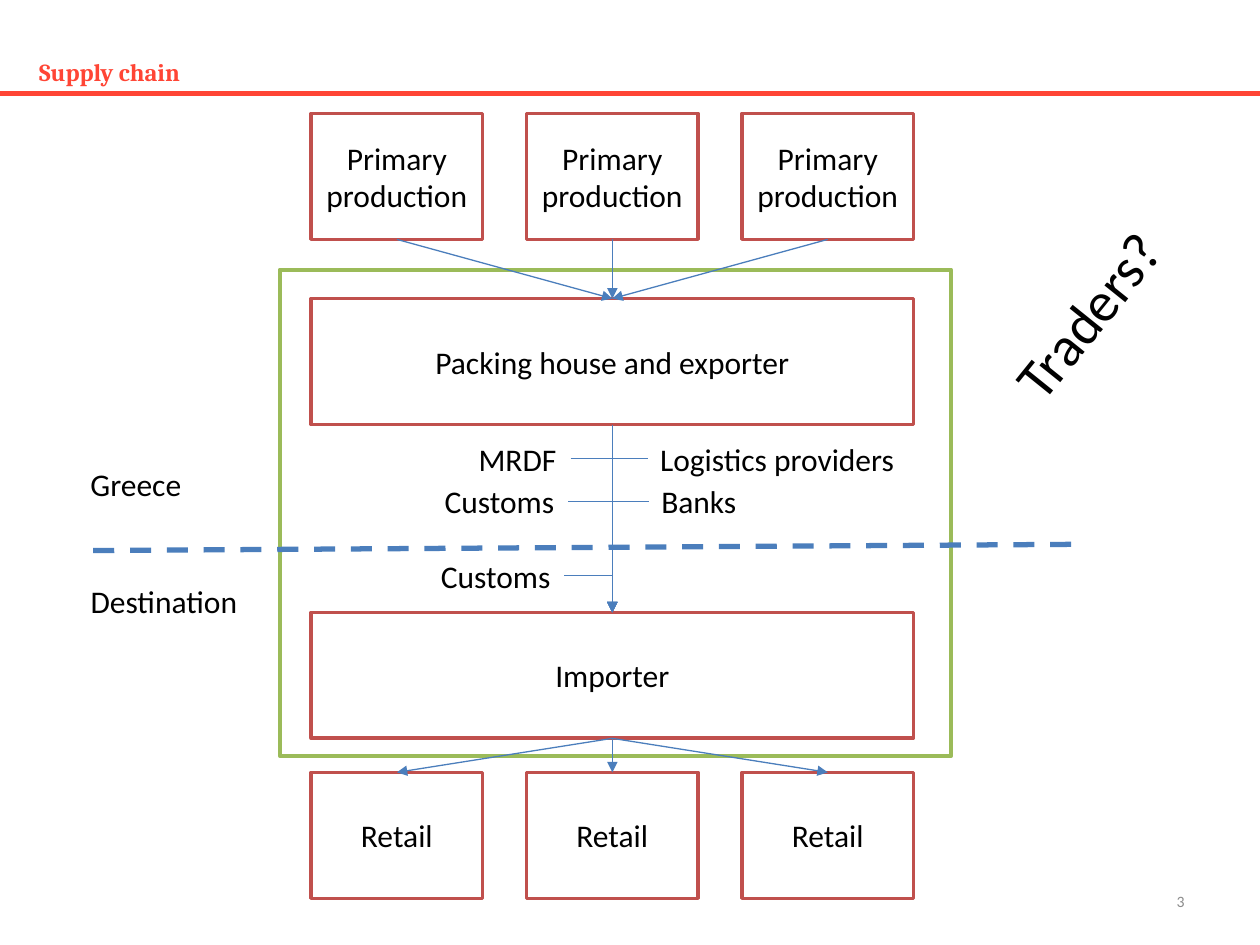
from collections import namedtuple

from lxml import etree
from pptx import Presentation
from pptx.dml.color import RGBColor
from pptx.enum.dml import MSO_LINE
from pptx.enum.shapes import MSO_CONNECTOR as CONNECTOR, MSO_SHAPE as SHAPE
from pptx.enum.text import MSO_ANCHOR as ANCHOR, MSO_AUTO_SIZE as AUTO_SIZE, PP_ALIGN as ALIGN
from pptx.oxml.ns import qn
from pptx.util import Inches, Pt

ACCENT = RGBColor(0xFF, 0x45, 0x35)
RED = RGBColor(0xC0, 0x50, 0x4D)
GREEN = RGBColor(0x9B, 0xBB, 0x59)
BLUE = RGBColor(0x4B, 0x7E, 0xBC)
GREY = RGBColor(0x8C, 0x8C, 0x8C)
BLACK = RGBColor(0, 0, 0)
WHITE = RGBColor(0xFF, 0xFF, 0xFF)

Box = namedtuple("Box", "left top width height")  # in inches


def to_lengths(values):
    return [Inches(value) for value in values]


def top_middle(box):
    return box.left + box.width / 2, box.top


def bottom_middle(box):
    return box.left + box.width / 2, box.top + box.height


def set_font(para, size, color=BLACK, name="Calibri"):
    para.font.size = Pt(size)
    para.font.name = name
    para.font.color.rgb = color


def add_line(page, start, end, color=BLUE, width=0.75, arrow=False, elbow=False):
    kind = CONNECTOR.ELBOW if elbow else CONNECTOR.STRAIGHT
    line = page.shapes.add_connector(kind, *to_lengths(start + end))
    line.line.color.rgb = color
    line.line.width = Pt(width)
    properties = line._element.spPr
    if elbow:  # a single corner: across, then down
        properties.find(qn("a:prstGeom")).set("prst", "bentConnector2")
    if arrow:
        etree.SubElement(properties.find(qn("a:ln")), qn("a:tailEnd"), type="triangle")
    etree.SubElement(properties, qn("a:effectLst"))
    return line


def add_rectangle(page, box, color, width, text=""):
    rectangle = page.shapes.add_shape(SHAPE.RECTANGLE, *to_lengths(box))
    rectangle.shadow.inherit = False
    rectangle.fill.solid()
    rectangle.fill.fore_color.rgb = WHITE
    rectangle.line.color.rgb = color
    rectangle.line.width = Pt(width)
    if text:
        frame = rectangle.text_frame
        frame.text = text
        frame.word_wrap = True
        frame.vertical_anchor = ANCHOR.MIDDLE
        para = frame.paragraphs[0]
        para.alignment = ALIGN.CENTER
        set_font(para, 18)


def add_label(page, box, text, size=18, color=BLACK):
    label = page.shapes.add_textbox(*to_lengths(box))
    frame = label.text_frame
    frame.text = text
    frame.word_wrap = False
    frame.auto_size = AUTO_SIZE.SHAPE_TO_FIT_TEXT
    set_font(frame.paragraphs[0], size, color)
    return label


def add_header(page, box):
    rule = box.top + box.height
    add_line(page, (0, rule), (10, rule), ACCENT, 2.7)
    title = page.shapes.title
    title.left, title.top, title.width, title.height = to_lengths(box)
    frame = title.text_frame
    frame.text = "Supply chain"
    frame.vertical_anchor = ANCHOR.MIDDLE
    frame.auto_size = AUTO_SIZE.NONE
    para = frame.paragraphs[0]
    para.alignment = ALIGN.LEFT
    set_font(para, 14, ACCENT, "Cambria")
    para.font.bold = True


def add_row(page, box, text, count=3, cell_width=1.36):
    """Spread equal boxes over the row and return where they stand."""
    step = (box.width - cell_width) / (count - 1)
    cells = [Box(box.left + i * step, box.top, cell_width, box.height) for i in range(count)]
    for cell in cells:
        add_rectangle(page, cell, RED, 2, text)
    return cells


def add_services(page, box):
    """Join the services on both sides to the arrow down the middle of the box."""
    center, bottom = bottom_middle(box)
    add_line(page, top_middle(box), (center, bottom), arrow=True)
    services = [  # text, offset from the center, offset from the top, width, is on the left
        ("MRDF", -1.16, 0.07, 0.83, True),
        ("Customs", -1.43, 0.41, 1.08, True),
        ("Logistics providers", 0.28, 0.07, 2.08, False),
        ("Banks", 0.29, 0.41, 0.8, False),
        ("Customs", -1.46, 1, 1.08, True),
    ]
    for text, across, down, width, on_left in services:
        label = Box(center + across, box.top + down, width, 0.4)
        add_label(page, label, text)
        joint = label.left + width if on_left else label.left
        add_line(page, (joint, label.top + 0.2), (center, bottom), arrow=True, elbow=True)


def add_border(page, box):
    """Divide the two countries by a dashed line, with their names at its left."""
    border = add_line(page, (box.left + 0.12, box.top + 0.73),
                      (box.left + box.width, box.top + 0.68), width=3)
    border.line.dash_style = MSO_LINE.DASH
    add_label(page, Box(box.left, box.top, 0.93, 0.4), "Greece")
    add_label(page, Box(box.left, box.top + box.height - 0.4, 1.38, 0.4), "Destination")


def add_chain(page, box):
    def band(top, height=1):
        return Box(box.left, box.top + top, box.width, height)

    add_rectangle(page, Box(box.left - 0.25, box.top + 1.24, 5.33, 3.86), GREEN, 2.25)
    producers = add_row(page, band(0), "Primary production")
    exporter, importer = band(1.47), band(3.96)
    add_rectangle(page, exporter, RED, 2, "Packing house and exporter")
    add_rectangle(page, importer, RED, 2, "Importer")
    retailers = add_row(page, band(5.23), "Retail")
    for producer in producers:
        add_line(page, bottom_middle(producer), top_middle(exporter), arrow=True)
    for retailer in retailers:
        add_line(page, bottom_middle(importer), top_middle(retailer), arrow=True)
    add_services(page, band(2.47, 1.49))


def add_page_number(page, box):
    label = add_label(page, box, "3", 9, GREY)
    frame = label.text_frame
    frame.auto_size = AUTO_SIZE.NONE
    frame.word_wrap = True
    frame.vertical_anchor = ANCHOR.MIDDLE
    frame.paragraphs[0].alignment = ALIGN.RIGHT


def main():
    deck = Presentation()
    deck.slide_width, deck.slide_height = Inches(10), Inches(7.5)
    page = deck.slides.add_slide(deck.slide_layouts[5])
    add_header(page, Box(0.21, 0.39, 9, 0.35))
    add_chain(page, Box(2.47, 0.9, 4.78, 6.23))
    add_border(page, Box(0.62, 3.64, 7.96, 1.33))
    traders = add_label(page, Box(7.76, 2.17, 1.75, 0.64), "Traders?", 32)
    traders.rotation = 308.7
    add_page_number(page, Box(7.17, 6.95, 2.33, 0.4))
    deck.save("out.pptx")


if __name__ == "__main__":
    main()
